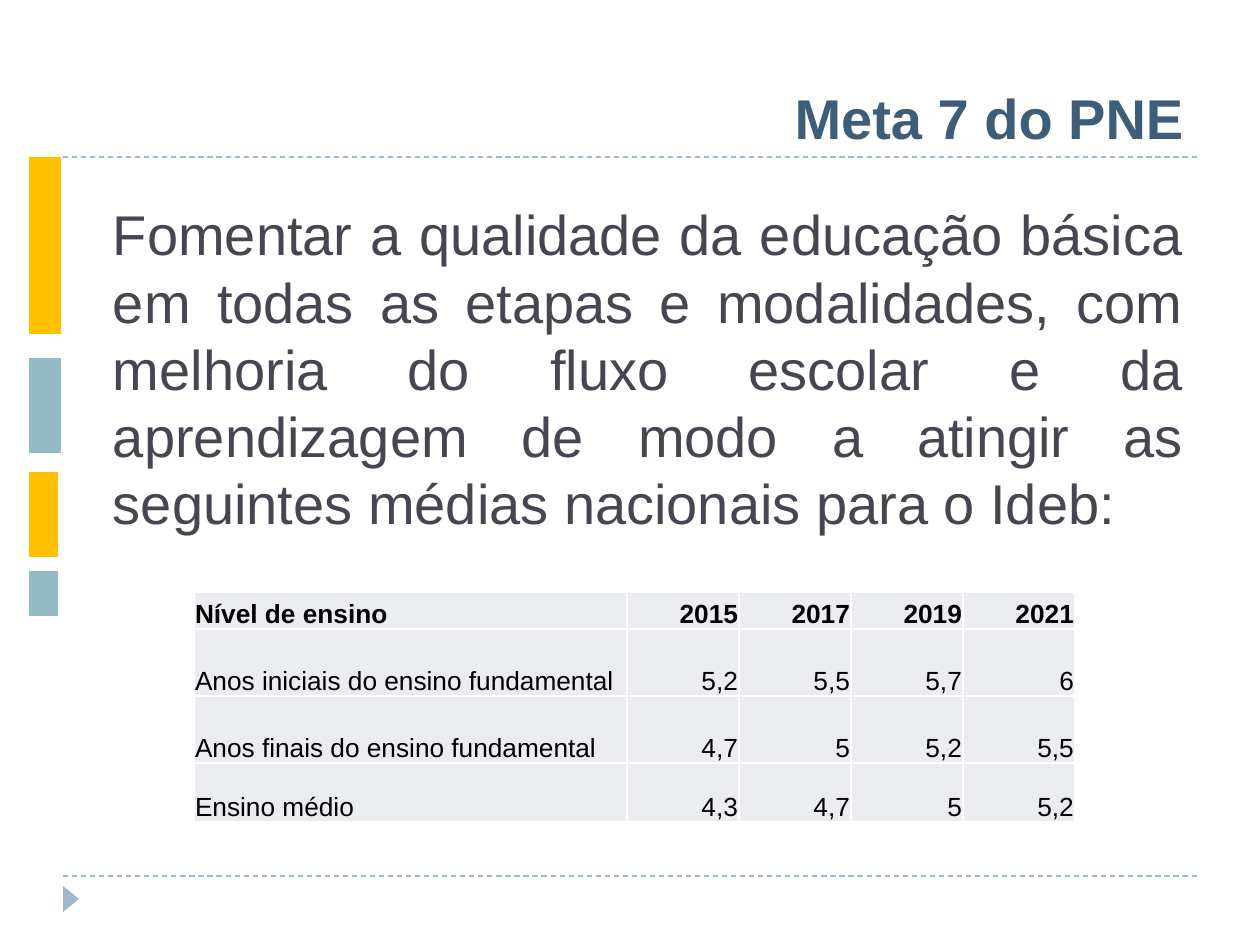
import pptx
import pptx.util
import pptx.dml.color
import pptx.enum.dml
import pptx.enum.shapes
import pptx.enum.text
import pptx.oxml.ns
from lxml import etree

RGBColor = pptx.dml.color.RGBColor
MSO_SHAPE = pptx.enum.shapes.MSO_SHAPE
PP_ALIGN = pptx.enum.text.PP_ALIGN
MSO_ANCHOR = pptx.enum.text.MSO_ANCHOR
qn = pptx.oxml.ns.qn

EMU_PER_PX = 914400 / 126
FONT = "Arial"
TITLE_BLUE = RGBColor(0x3E, 0x5D, 0x78)
BODY_GRAY = RGBColor(0x46, 0x46, 0x53)
RULE_BLUE = RGBColor(0x9F, 0xB8, 0xCD)
AMBER = RGBColor(0xFF, 0xC0, 0x00)
TEAL = RGBColor(0x94, 0xBA, 0xC3)
CELL_GRAY = RGBColor(0xEB, 0xEC, 0xF0)
BLACK = RGBColor(0, 0, 0)
WHITE = RGBColor(0xFF, 0xFF, 0xFF)

GOAL = ("Fomentar a qualidade da educação básica em todas as etapas e "
        "modalidades, com melhoria do fluxo escolar e da aprendizagem de modo "
        "a atingir as seguintes médias nacionais para o Ideb:")
IDEB_TARGETS = [
    ["Nível de ensino", "2015", "2017", "2019", "2021"],
    ["Anos iniciais do ensino fundamental", "5,2", "5,5", "5,7", "6"],
    ["Anos finais do ensino fundamental", "4,7", "5", "5,2", "5,5"],
    ["Ensino médio", "4,3", "4,7", "5", "5,2"],
]
COLUMN_WIDTHS = [433] + [112] * 4
ROW_HEIGHTS = [37, 67, 67, 59]


def px(length):
    return pptx.util.Emu(round(length * EMU_PER_PX))


def style_paragraph(paragraph, size, color, align, bold=False):
    paragraph.alignment = align
    paragraph.font.name = FONT
    paragraph.font.size = pptx.util.Pt(size)
    paragraph.font.color.rgb = color
    paragraph.font.bold = bold


def add_dashed_rule(slide, y):
    rule = slide.shapes.add_connector(
        pptx.enum.shapes.MSO_CONNECTOR.STRAIGHT, px(63), px(y), px(1197), px(y))
    rule.line.color.rgb = RULE_BLUE
    rule.line.width = pptx.util.Pt(0.75)
    rule.line.dash_style = pptx.enum.dml.MSO_LINE.DASH
    etree.SubElement(rule._element.spPr, qn("a:effectLst"))


def add_block(slide, kind, box, color, rotation=0):
    block = slide.shapes.add_shape(kind, *map(px, box))
    block.shadow.inherit = False
    block.fill.solid()
    block.fill.fore_color.rgb = color
    block.line.fill.background()
    block.rotation = rotation


def add_text(slide, box, text, color, align, anchor, bold=False):
    frame = slide.shapes.add_textbox(*map(px, box)).text_frame
    frame.word_wrap = True
    frame.vertical_anchor = anchor
    frame.margin_left = frame.margin_right = 0
    frame.margin_top = frame.margin_bottom = 0
    paragraph = frame.paragraphs[0]
    paragraph.text = text
    style_paragraph(paragraph, 32, color, align, bold)
    return paragraph


def set_borders(cell):
    properties = cell._tc.get_or_add_tcPr()
    for side in ("a:lnL", "a:lnR", "a:lnT", "a:lnB"):
        border = etree.SubElement(properties, qn(side), w=str(pptx.util.Pt(1)))
        fill = etree.SubElement(border, qn("a:solidFill"))
        etree.SubElement(fill, qn("a:srgbClr"), val=str(WHITE))


def fill_cell(cell, text, align, bold):
    cell.margin_left = cell.margin_right = cell.margin_top = px(1)
    cell.margin_bottom = 0
    cell.vertical_anchor = MSO_ANCHOR.BOTTOM
    set_borders(cell)
    cell.fill.solid()
    cell.fill.fore_color.rgb = CELL_GRAY
    cell.text = text
    style_paragraph(cell.text_frame.paragraphs[0], 15, BLACK, align, bold)


def add_targets_table(slide, left, top):
    table = slide.shapes.add_table(
        len(ROW_HEIGHTS), len(COLUMN_WIDTHS), px(left), px(top),
        px(sum(COLUMN_WIDTHS)), px(sum(ROW_HEIGHTS))).table
    for column, width in zip(table.columns, COLUMN_WIDTHS):
        column.width = px(width)
    for row, height in zip(table.rows, ROW_HEIGHTS):
        row.height = px(height)
    for r, values in enumerate(IDEB_TARGETS):
        for c, value in enumerate(values):
            align = PP_ALIGN.RIGHT if c else PP_ALIGN.LEFT
            fill_cell(table.cell(r, c), value, align, bold=r == 0)


def main():
    deck = pptx.Presentation()
    deck.slide_width, deck.slide_height = px(1260), px(945)
    slide = deck.slides.add_slide(deck.slide_layouts[6])

    # Rules and footer marker
    for y in (876, 157):
        add_dashed_rule(slide, y)
    add_block(slide, MSO_SHAPE.ISOSCELES_TRIANGLE, (58, 891, 26, 16),
              RULE_BLUE, rotation=90)

    # Colour bars at the left edge
    for top, width, height, color in ((157, 32, 177, AMBER), (358, 32, 95, TEAL),
                                      (472, 29, 85, AMBER), (571, 29, 45, TEAL)):
        add_block(slide, MSO_SHAPE.RECTANGLE, (29, top, width, height), color)

    # Title and goal
    add_text(slide, (76, 21, 1108, 130), "Meta 7 do PNE", TITLE_BLUE,
             PP_ALIGN.RIGHT, MSO_ANCHOR.BOTTOM, bold=True)
    goal = add_text(slide, (113, 200, 1071, 340), GOAL, BODY_GRAY,
                    PP_ALIGN.JUSTIFY, MSO_ANCHOR.TOP)
    goal.line_spacing = pptx.util.Pt(38.4)

    # Ideb targets
    add_targets_table(slide, 194, 592)

    deck.save("out.pptx")


if __name__ == "__main__":
    main()
